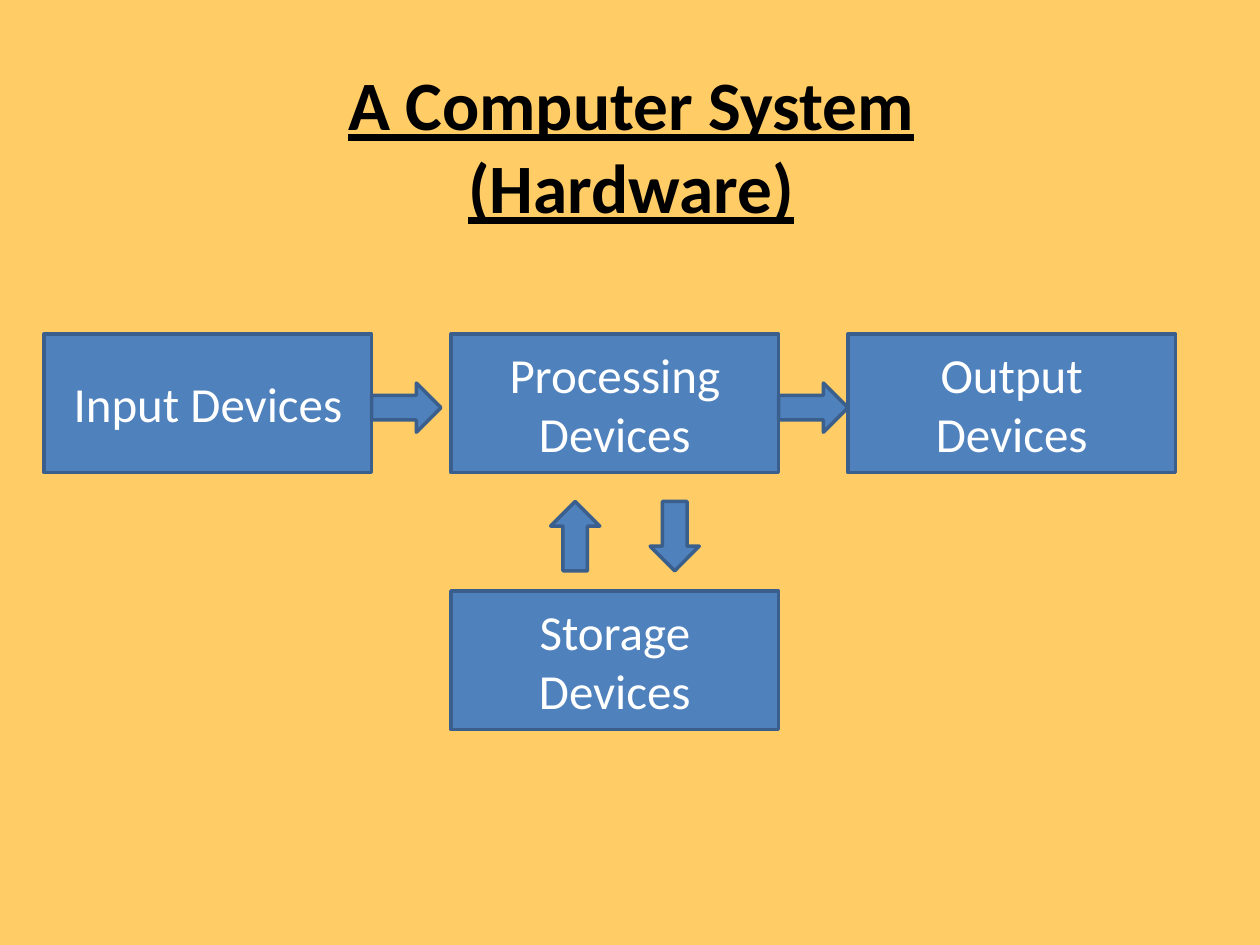
from pptx import Presentation
from pptx.dml.color import RGBColor
from pptx.enum.shapes import MSO_SHAPE as Shape
from pptx.enum.text import MSO_ANCHOR as Anchor, MSO_AUTO_SIZE as AutoSize, PP_ALIGN as Align
from pptx.util import Pt

COLORS = {
    "background": "FFCC66",
    "title": "000000",
    "fill": "4F81BD",
    "outline": "3A5F8C",
    "label": "FFFFFF",
}
BOX_WIDTH, BOX_HEIGHT = 187.2, 79.2
ARROW_LENGTH, ARROW_WIDTH = 39.6, 28.08
INPUT_LEFT, PROCESSING_LEFT, OUTPUT_LEFT = 25.2, 257.76, 484.56
MAIN_TOP, STORAGE_TOP = 190.8, 337.68
FLOW_TOP, EXCHANGE_TOP = 218.88, 292.32


class Diagram:
    font_name = "Calibri"

    def __init__(self, slide):
        self.slide = slide
        slide.background.fill.solid()
        slide.background.fill.fore_color.rgb = self.color("background")

    def color(self, name):
        return RGBColor.from_string(COLORS[name])

    def add_run(self, paragraph, text, size, color, emphasis=False):
        run = paragraph.add_run()
        run.text = text
        run.font.name = self.font_name
        run.font.size = Pt(size)
        run.font.color.rgb = self.color(color)
        run.font.bold = run.font.underline = emphasis

    def title(self, lines, left, top, width, height):
        shape = self.slide.shapes.title
        shape.left, shape.top = Pt(left), Pt(top)
        shape.width, shape.height = Pt(width), Pt(height)
        frame = shape.text_frame
        frame.auto_size = AutoSize.NONE
        frame.word_wrap = True
        frame.vertical_anchor = Anchor.MIDDLE
        paragraph = frame.paragraphs[0]
        paragraph.alignment = Align.CENTER
        for index, line in enumerate(lines):
            if index:
                paragraph.add_line_break()
            self.add_run(paragraph, line, 39.6, "title", emphasis=True)

    def block(self, kind, left, top, width, height):
        shape = self.slide.shapes.add_shape(kind, Pt(left), Pt(top), Pt(width), Pt(height))
        shape.shadow.inherit = False
        shape.fill.solid()
        shape.fill.fore_color.rgb = self.color("fill")
        shape.line.color.rgb = self.color("outline")
        shape.line.width = Pt(2)
        return shape

    def box(self, text, left, top):
        shape = self.block(Shape.RECTANGLE, left, top, BOX_WIDTH, BOX_HEIGHT)
        frame = shape.text_frame
        frame.word_wrap = True
        frame.vertical_anchor = Anchor.MIDDLE
        paragraph = frame.paragraphs[0]
        paragraph.alignment = Align.CENTER
        self.add_run(paragraph, text, 28, "label")

    def arrow(self, left, top, rotation=0):
        shape = self.block(Shape.RIGHT_ARROW, left, top, ARROW_LENGTH, ARROW_WIDTH)
        shape.rotation = rotation


def main():
    presentation = Presentation()
    presentation.slide_width, presentation.slide_height = Pt(720), Pt(540)
    diagram = Diagram(presentation.slides.add_slide(presentation.slide_layouts[5]))
    diagram.title(["A Computer System", "(Hardware)"], 36.72, 37.44, 648, 90)

    for text, left, top in [
        ("Input Devices", INPUT_LEFT, MAIN_TOP),
        ("Processing Devices", PROCESSING_LEFT, MAIN_TOP),
        ("Storage Devices", PROCESSING_LEFT, STORAGE_TOP),
        ("Output Devices", OUTPUT_LEFT, MAIN_TOP),
    ]:
        diagram.box(text, left, top)

    for left in (INPUT_LEFT, PROCESSING_LEFT):
        diagram.arrow(left + BOX_WIDTH, FLOW_TOP)
    for left, rotation in [(365.76, 90), (308.88, 270)]:
        diagram.arrow(left, EXCHANGE_TOP, rotation)

    presentation.save("out.pptx")


if __name__ == "__main__":
    main()
